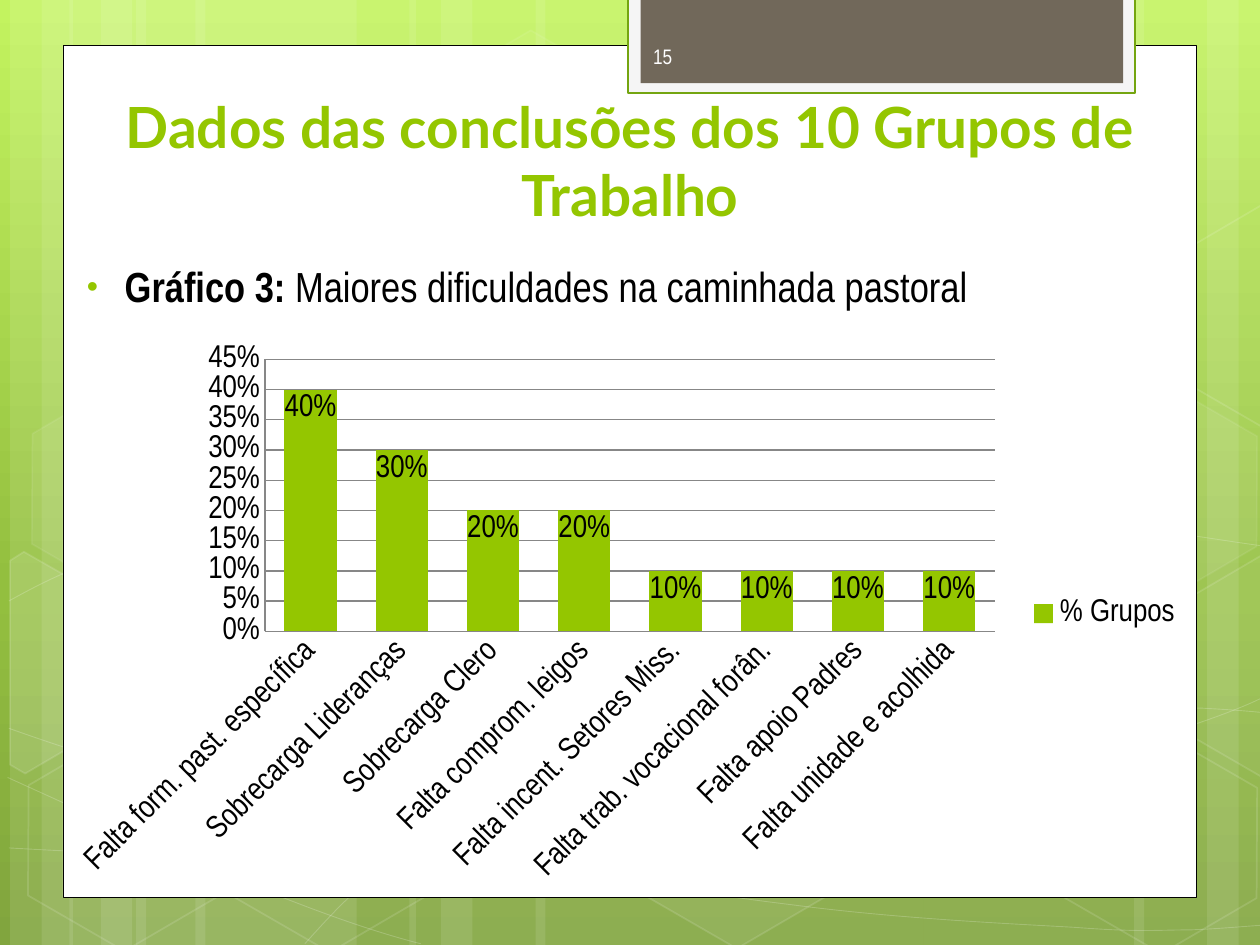
from copy import deepcopy

from lxml import etree
from pptx import Presentation
from pptx.chart.data import CategoryChartData
from pptx.dml.color import RGBColor
from pptx.enum.chart import XL_CHART_TYPE, XL_LABEL_POSITION, XL_LEGEND_POSITION, XL_TICK_MARK
from pptx.enum.shapes import MSO_SHAPE
from pptx.enum.text import MSO_ANCHOR, MSO_AUTO_SIZE, PP_ALIGN
from pptx.oxml import parse_xml
from pptx.oxml.ns import nsdecls, qn
from pptx.util import Inches, Pt

COLUMN, LEGEND_RIGHT = XL_CHART_TYPE.COLUMN_CLUSTERED, XL_LEGEND_POSITION.RIGHT
INSIDE_END, NO_TICK = XL_LABEL_POSITION.INSIDE_END, XL_TICK_MARK.NONE
RECTANGLE, HEXAGON = MSO_SHAPE.RECTANGLE, MSO_SHAPE.HEXAGON
BOTTOM, MIDDLE, CENTER = MSO_ANCHOR.BOTTOM, MSO_ANCHOR.MIDDLE, PP_ALIGN.CENTER
NO_AUTOFIT = MSO_AUTO_SIZE.NONE

CELL = Inches(0.1)  # the slide is a grid of 100 columns and 75 rows
COLUMNS, ROWS = 100, 75

# left column, width, rotation
STRIPES = [(10.8, 17.5, 0), (0.8, 5, 0), (3.3, 8.3, 0), (15.5, 17.5, 0), (5.5, 5, 0), (8, 8.3, 0),
           (73.3, 17.5, 180), (95.8, 5, 180), (90, 8.3, 180),
           (42.5, 30.8, 0), (32.5, 5, 0), (35, 8.3, 0)]

# start point, then three control points for each Bézier segment
WAVES = [
    [(0.7, 67.3), (6.1, 67.6), (11.5, 67.9), (19, 67.8), (26.5, 67.7), (35.8, 67.5), (45.8, 66.5),
     (55.8, 65.5), (70, 63.6), (79.2, 61.7), (88.3, 59.8), (97.7, 56.8), (100.7, 55.1)],
    [(0.7, 47.7), (3.6, 46.1), (6.5, 44.6), (12.1, 43.1), (17.8, 41.6), (25.9, 39.4), (34.7, 38.7),
     (43.6, 38), (54.4, 37.9), (65.4, 38.7), (76.4, 39.5), (94.7, 42.6), (100.7, 43.4)],
    [(0.6, 61.7), (12.7, 67.2), (24.7, 72.7), (33.4, 74.9)],
    [(0.7, 57.8), (3.8, 58.9), (7, 60), (12.8, 61.6), (18.6, 63.1), (27.3, 65.6), (35.7, 67.3),
     (44, 69), (54.5, 70.8), (62.8, 71.8), (71.1, 72.9), (80, 73.3), (85.3, 73.6),
     (90.5, 74), (91.9, 73.8), (94.5, 73.8), (97.1, 73.7), (98.9, 73.5), (100.7, 73.4)],
    [(24.2, 74.9), (26, 72.9), (27.8, 70.9), (30.2, 69.1), (32.6, 67.3), (36, 65.3), (38.8, 63.9),
     (41.6, 62.5), (43.3, 61.9), (47, 60.9), (50.6, 59.9), (57.3, 58.5), (60.8, 57.8),
     (64.4, 57.1), (64.9, 57.1), (68, 56.9), (71.1, 56.6), (76, 56.3), (79.4, 56.2),
     (82.9, 56.1), (88.6, 56.2), (88.6, 56.2), (91, 56.2), (93, 56.2), (95.3, 56.2),
     (97.1, 56.3), (98.8, 56.4), (100.6, 56.6)],
]

# left column, top row, fill opacity, line opacity
HEXAGONS = [(33.4, 3.6, 4, 8), (49.7, 58.9, 6, 12), (1.1, 59.1, 0, 12), (1.4, 31.2, 7, 8),
            (17.4, 59.2, 0, 12), (75.3, 45.3, 10, 12), (83.4, 59.3, 0, 12), (83.4, 31.4, 7, 8)]

# hexagons cut by the slide's edge: corners, fill opacity
CUT_HEXAGONS = [
    ([(0.8, 44.5), (1.9, 43.8), (9.6, 48.2), (9.5, 57), (2, 61.4), (0.8, 60.7)], 10),
    ([(92.6, 48.5), (100.1, 44.1), (100.9, 44.6), (100.9, 61.3), (100.2, 61.7), (92.6, 57.3)], 4),
    ([(92.6, 20.7), (100.1, 16.3), (101, 16.8), (100.9, 33.5), (100.2, 33.9), (92.6, 29.5)], 0),
]

DIFFICULTIES = {
    "Falta form. past. específica": 0.4, "Sobrecarga Lideranças": 0.3,
    "Sobrecarga Clero": 0.2, "Falta comprom. leigos": 0.2,
    "Falta incent. Setores Miss.": 0.1, "Falta trab. vocacional forân.": 0.1,
    "Falta apoio Padres": 0.1, "Falta unidade e acolhida": 0.1,
}


def rgb(hex_code):
    return RGBColor.from_string(hex_code)


def cells(*counts):
    return [round(count * CELL) for count in counts]


class SlideBuilder:
    GREEN, DARK_GREEN, BROWN = "94C600", "74A510", "71685A"
    WHITE, BLACK, GREY = "FFFFFF", "000000", "878787"
    FONT, TITLE_FONT = "Arial Narrow", "Lato"

    def __init__(self, deck):
        self.slide = deck.slides.add_slide(deck.slide_layouts[1])

    def background(self, colors):
        """Vertical gradient from (position, colour) pairs."""
        fill = self.slide.background.fill
        fill.gradient()
        fill.gradient_angle = 270
        stop_list = self.slide.background.element.find(".//" + qn("a:gsLst"))
        stop_list.append(deepcopy(stop_list[0]))
        for stop, (position, color) in zip(fill.gradient_stops, colors):
            stop.position = position
            stop.color.rgb = rgb(color)

    def paint(self, fill, color, opacity):
        """Set a solid fill, or no fill at zero opacity."""
        if not opacity:
            fill.background()
            return
        fill.solid()
        fill.fore_color.rgb = rgb(color)
        if opacity < 100:
            solid = fill._xPr.find(qn("a:solidFill"))
            etree.SubElement(solid[0], qn("a:alpha"), val=str(opacity * 1000))

    def finish(self, shape, fill=WHITE, opacity=100, line=WHITE, width=1, line_opacity=0):
        shape.shadow.inherit = False
        self.paint(shape.fill, fill, opacity)
        shape.line.width = Pt(width)
        self.paint(shape.line.fill, line, line_opacity)

    def box(self, kind, place, rotation=0, **look):
        shape = self.slide.shapes.add_shape(kind, *cells(*place))
        shape.rotation = rotation
        if kind == HEXAGON:
            shape.adjustments[0] = 0.285
        self.finish(shape, **look)

    def outline(self, points, closed=True, **look):
        corners = [cells(*point) for point in points]
        builder = self.slide.shapes.build_freeform(*corners[0])
        builder.add_line_segments(corners[1:], close=closed)
        shape = builder.convert_to_shape()
        self.finish(shape, **look)
        return shape

    def curve(self, points, **look):
        """Open outline whose points, three by three, steer Bézier segments."""
        shape = self.outline(points, closed=False, **look)
        lines = list(shape.element.iter(qn("a:lnTo")))
        for i in range(0, len(lines), 3):
            bezier = etree.SubElement(lines[i].getparent(), qn("a:cubicBezTo"))
            for line in lines[i:i + 3]:
                bezier.append(line[0])
                line.getparent().remove(line)

    def place(self, shape, place):
        """Position a placeholder and bring it to the front."""
        shape.left, shape.top, shape.width, shape.height = cells(*place)
        shape.element.getparent().append(shape.element)
        shape.text_frame.auto_size = NO_AUTOFIT
        return shape.text_frame

    def style(self, font, size, color=BLACK, name=FONT, bold=False):
        font.size, font.name, font.bold = Pt(size), name, bold
        font.color.rgb = rgb(color)

    def add_run(self, paragraph, text, size, **look):
        run = paragraph.add_run()
        run.text = text
        self.style(run.font, size, **look)

    def title(self, text, place):
        frame = self.place(self.slide.shapes.title, place)
        frame.vertical_anchor = BOTTOM
        frame.paragraphs[0].alignment = CENTER
        self.add_run(frame.paragraphs[0], text, 32.4, color=self.GREEN,
                     name=self.TITLE_FONT, bold=True)

    def bullet(self, lead, text, place):
        paragraph = self.place(self.slide.placeholders[1], place).paragraphs[0]
        paragraph.space_before = paragraph.space_after = Pt(12)
        props = paragraph._p.get_or_add_pPr()
        props.set("marL", str(Inches(0.38)))
        props.set("indent", str(Inches(-0.3)))
        color = etree.SubElement(props, qn("a:buClr"))
        etree.SubElement(color, qn("a:srgbClr"), val=self.GREEN)
        etree.SubElement(props, qn("a:buSzPct"), val="76000")
        etree.SubElement(props, qn("a:buFont"), typeface="Arial")
        etree.SubElement(props, qn("a:buChar"), char="•")
        self.add_run(paragraph, lead, 24, bold=True)
        self.add_run(paragraph, text, 24)

    def label(self, text, place):
        frame = self.slide.shapes.add_textbox(*cells(*place)).text_frame
        frame.word_wrap = True
        frame.vertical_anchor = MIDDLE
        self.add_run(frame.paragraphs[0], text, 12, color="FEFEFE")

    def column_chart(self, series_name, values, place, plot_place):
        data = CategoryChartData(number_format="0%")
        data.categories = values.keys()
        data.add_series(series_name, values.values())
        chart = self.slide.shapes.add_chart(COLUMN, *cells(*place), data).chart
        self.style(chart.font, 18)
        chart.has_title = False
        chart.has_legend = True
        chart.legend.position = LEGEND_RIGHT
        chart.legend.include_in_layout = False
        plot = chart.plots[0]
        plot.gap_width, plot.overlap, plot.vary_by_categories = 75, 40, False
        self.paint(plot.series[0].format.fill, self.GREEN, 100)
        plot.has_data_labels = True
        labels = plot.data_labels
        labels.show_value, labels.position = True, INSIDE_END
        labels.number_format, labels.number_format_is_linked = "0%", False
        scale, categories = chart.value_axis, chart.category_axis
        scale.tick_labels.number_format = "0%"
        scale.tick_labels.number_format_is_linked = False
        for axis in (scale, categories):
            axis.major_tick_mark = axis.minor_tick_mark = NO_TICK
        for font in (labels.font, scale.tick_labels.font, categories.tick_labels.font):
            self.style(font, 18)
        for ruled in (scale, categories, scale.major_gridlines):
            ruled.format.line.color.rgb = rgb(self.GREY)
        categories._element.find(".//" + qn("a:bodyPr")).set("rot", "-2700000")
        self.fix_plot_area(chart, place, plot_place)

    def fix_plot_area(self, chart, place, plot_place):
        left, top, width, height = place
        x, y, w, h = plot_place
        shares = ((x - left) / width, (y - top) / height, w / width, h / height)
        area = chart._chartSpace.find(".//" + qn("c:plotArea"))
        for automatic in area.findall(qn("c:layout")):
            area.remove(automatic)
        settings = [("layoutTarget", "inner"), ("xMode", "edge"), ("yMode", "edge"),
                    *zip("xywh", shares)]
        tags = "".join(f'<c:{tag} val="{value}"/>' for tag, value in settings)
        area.insert(0, parse_xml(f'<c:layout {nsdecls("c")}><c:manualLayout>{tags}'
                                 '</c:manualLayout></c:layout>'))


def main():
    deck = Presentation()
    deck.slide_width, deck.slide_height = cells(COLUMNS, ROWS)
    page = SlideBuilder(deck)
    page.background([(0, "C3F35F"), (0.62, "93BF3F"), (1, "81A53E")])
    for left, width, rotation in STRIPES:
        page.box(RECTANGLE, (left, 0, width, ROWS), rotation, opacity=10)
    for wave in WAVES:
        page.curve(wave, opacity=0, width=0.5, line_opacity=20)
    for left, top, opacity, line_opacity in HEXAGONS:
        page.box(HEXAGON, (left, top, 17.5, 15.2), 30, opacity=opacity, line_opacity=line_opacity)
    for corners, opacity in CUT_HEXAGONS:
        page.outline(corners, opacity=opacity, line_opacity=12)
    page.box(RECTANGLE, (5, 3.6, 90, 67.65), line=page.BLACK, width=0.5, line_opacity=100)
    page.box(RECTANGLE, (49.85, -0.2, 40.2, 7.6), fill="F5F5F5",
             line=page.DARK_GREEN, width=1.25, line_opacity=100)
    page.box(RECTANGLE, (50.85, -0.2, 38.3, 6.8), fill=page.BROWN)
    page.bullet("Gráfico 3:", " Maiores dificuldades na caminhada pastoral",
                (5.1, 20.2, 89.8, 51.2))
    page.title("Dados das conclusões dos 10 Grupos de Trabalho", (5.1, 6.1, 89.8, 12.5))
    page.column_chart("% Grupos", DIFFICULTIES, (5.1, 26.5, 89.8, 44.4),
                      (21.03, 28.52, 57.94, 21.59))
    page.label("15", (50.85, 2.45, 14.6, 4))
    deck.save("out.pptx")


if __name__ == "__main__":
    main()
